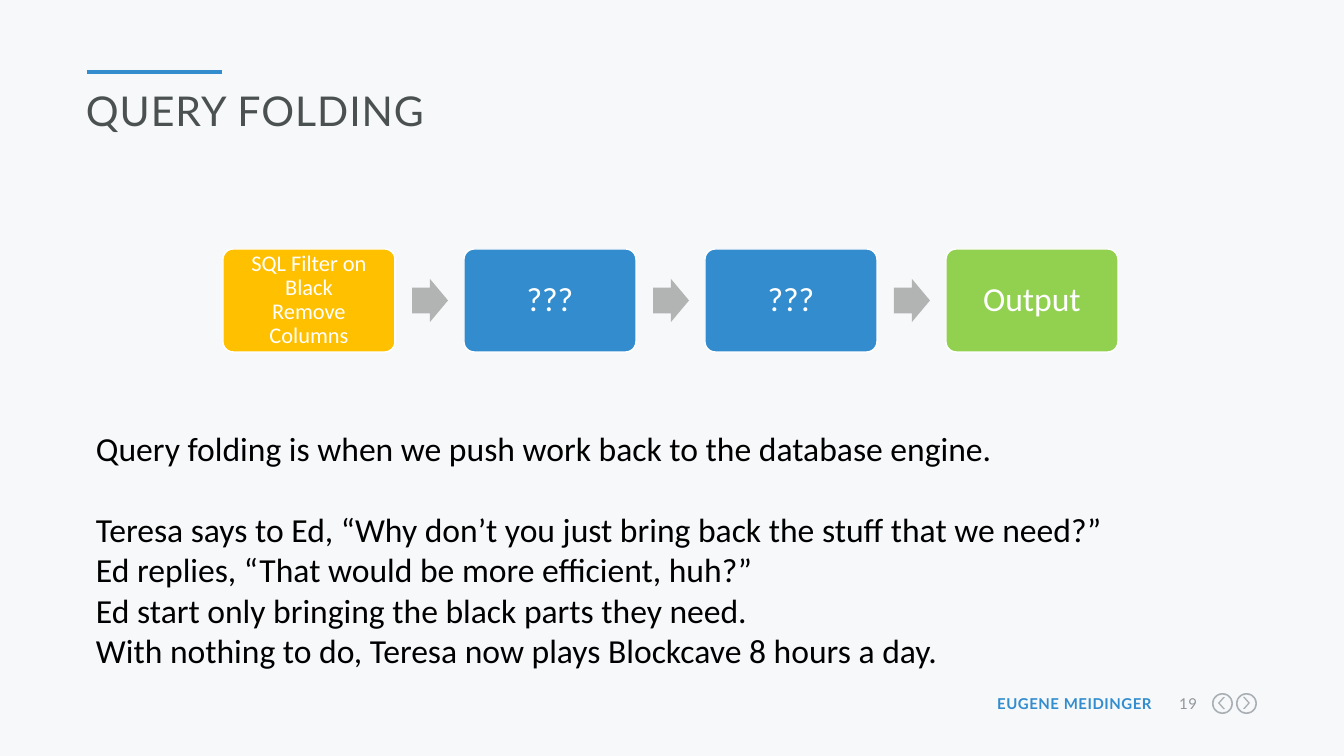
from dataclasses import dataclass

from lxml import etree
from pptx import Presentation
from pptx.dml.color import RGBColor
from pptx.enum.shapes import MSO_CONNECTOR, MSO_SHAPE
from pptx.enum.text import MSO_ANCHOR, MSO_AUTO_SIZE, PP_ALIGN
from pptx.oxml.ns import qn
from pptx.util import Emu, Pt

STRAIGHT = MSO_CONNECTOR.STRAIGHT
ROUNDED = MSO_SHAPE.ROUNDED_RECTANGLE
ARROW = MSO_SHAPE.RIGHT_ARROW
RING = MSO_SHAPE.DONUT
CHEVRON = MSO_SHAPE.CHEVRON
TOP, MIDDLE = MSO_ANCHOR.TOP, MSO_ANCHOR.MIDDLE
LEFT, CENTER, RIGHT = PP_ALIGN.LEFT, PP_ALIGN.CENTER, PP_ALIGN.RIGHT
NO_AUTOFIT = MSO_AUTO_SIZE.NONE

EMU_PER_PX = 914400 / 100.8
TITLE_ONLY = 5


@dataclass(frozen=True)
class Theme:
    background: str = "F6F8FA"
    blue: str = "328CCD"
    yellow: str = "FFC000"
    green: str = "92D050"
    arrow: str = "B2B3B3"
    icon: str = "AAAFB4"
    heading: str = "4B5050"
    muted: str = "91969B"
    white: str = "FFFFFF"
    black: str = "000000"
    heading_font: str = "Lato"
    body_font: str = "Calibri"
    title_size: float = 29.3
    body_size: float = 24
    detail_size: float = 16
    footer_size: float = 10.7


THEME = Theme()

STEPS = [
    (["SQL Filter on Black", "Remove Columns"], THEME.yellow, THEME.detail_size),
    (["???"], THEME.blue, THEME.body_size),
    (["???"], THEME.blue, THEME.body_size),
    (["Output"], THEME.green, THEME.body_size),
]

STORY = [
    ["Query folding is when we push work back to the database engine."],
    ["Teresa says to Ed, “Why don’t you just bring back the stuff that we need?”"],
    ["Ed replies, “That would be more efficient, huh?”"],
    ["Ed start only bringing the black parts they need.",
     "With nothing to do, Teresa now plays Blockcave 8 hours a day."],
]


def px(n):
    return Emu(round(n * EMU_PER_PX))


def rgb(color):
    return RGBColor.from_string(color)


def place(sp, left, top, width, height):
    sp.left, sp.top, sp.width, sp.height = map(px, (left, top, width, height))


def set_frame(tf, inset_x, inset_y, anchor):
    tf.word_wrap = True
    tf.auto_size = NO_AUTOFIT
    tf.vertical_anchor = anchor
    tf.margin_left = tf.margin_right = px(inset_x)
    tf.margin_top = tf.margin_bottom = px(inset_y)


def add_run(p, text, size, color, font, bold=False, tracking=0):
    r = p.add_run()
    r.text = text
    r.font.size = Pt(size)
    r.font.name = font
    r.font.bold = bold
    r.font.color.rgb = rgb(color)
    if tracking:
        r._r.get_or_add_rPr().set("spc", str(round(tracking * 100)))


def add_paragraph(tf, index, align):
    p = tf.add_paragraph() if index else tf.paragraphs[0]
    p.alignment = align
    return p


def add_solid(s, kind, box, color, adjustments):
    sp = s.shapes.add_shape(kind, *map(px, box))
    sp.shadow.inherit = False
    sp.fill.solid()
    sp.fill.fore_color.rgb = rgb(color)
    sp.line.fill.background()
    for i, value in enumerate(adjustments):
        sp.adjustments[i] = value
    return sp


def add_title(s, text):
    sp = s.shapes.title
    place(sp, 86, 85, 1169, 56)
    tf = sp.text_frame
    set_frame(tf, 0, 0, TOP)
    p = add_paragraph(tf, 0, LEFT)
    p.line_spacing = 1.0
    p.space_before = Pt(0)
    add_run(p, text, THEME.title_size, THEME.heading, THEME.heading_font, tracking=0.7)


def add_accent_line(s):
    line = s.shapes.add_connector(STRAIGHT, px(87), px(72), px(222), px(72))
    line.line.color.rgb = rgb(THEME.blue)
    line.line.width = Pt(2.25)
    etree.SubElement(line._element.spPr, qn("a:effectLst"))


def add_footer_text(s, box, text, color, bold=False):
    tf = s.shapes.add_textbox(*map(px, box)).text_frame
    set_frame(tf, 0, 0, TOP)
    p = add_paragraph(tf, 0, RIGHT)
    add_run(p, text, THEME.footer_size, color, THEME.heading_font, bold, 0.4)


def add_nav_icon(s, left, chevron_left, rotation):
    add_solid(s, RING, (left, 693, 21, 21), THEME.icon, [0.07])
    chevron = add_solid(s, CHEVRON, (chevron_left, 697, 7, 12), THEME.icon, [0.75])
    chevron.rotation = rotation


def add_step(s, left, lines, color, size):
    sp = add_solid(s, ROUNDED, (left, 249, 172, 103), color, [0.1])
    sp.line.color.rgb = rgb(THEME.white)
    sp.line.width = Pt(1)
    tf = sp.text_frame
    set_frame(tf, 13, 13, MIDDLE)
    for i, text in enumerate(lines):
        p = add_paragraph(tf, i, CENTER)
        p.line_spacing = 0.9
        add_run(p, text, size, THEME.white, THEME.body_font)


def add_flow(s):
    left, pitch = 223, 241
    for i, (lines, color, size) in enumerate(STEPS):
        x = left + i * pitch
        if i:
            add_solid(s, ARROW, (x - 52, 279, 36, 43), THEME.arrow, [0.6, 0.5])
        add_step(s, x, lines, color, size)


def add_story(s):
    tf = s.shapes.add_textbox(px(86), px(423), px(1169), px(254)).text_frame
    set_frame(tf, 10, 5, TOP)
    for i, lines in enumerate(STORY):
        p = add_paragraph(tf, i, LEFT)
        for j, text in enumerate(lines):
            if j:
                p.add_line_break()
            add_run(p, text, THEME.body_size, THEME.black, THEME.body_font)
    tf.paragraphs[0].space_after = Pt(29)


def main():
    prs = Presentation()
    prs.slide_width, prs.slide_height = px(1344), px(756)
    s = prs.slides.add_slide(prs.slide_layouts[TITLE_ONLY])
    s.background.fill.solid()
    s.background.fill.fore_color.rgb = rgb(THEME.background)
    add_accent_line(s)
    add_footer_text(s, (972, 695, 180, 18), "EUGENE MEIDINGER", THEME.blue, bold=True)
    add_footer_text(s, (1167, 695, 30, 18), "19", THEME.muted)
    add_nav_icon(s, 1236, 1243, 0)
    add_nav_icon(s, 1212, 1218, 180)
    add_title(s, "QUERY FOLDING")
    add_story(s)
    add_flow(s)
    prs.save("out.pptx")


if __name__ == "__main__":
    main()
